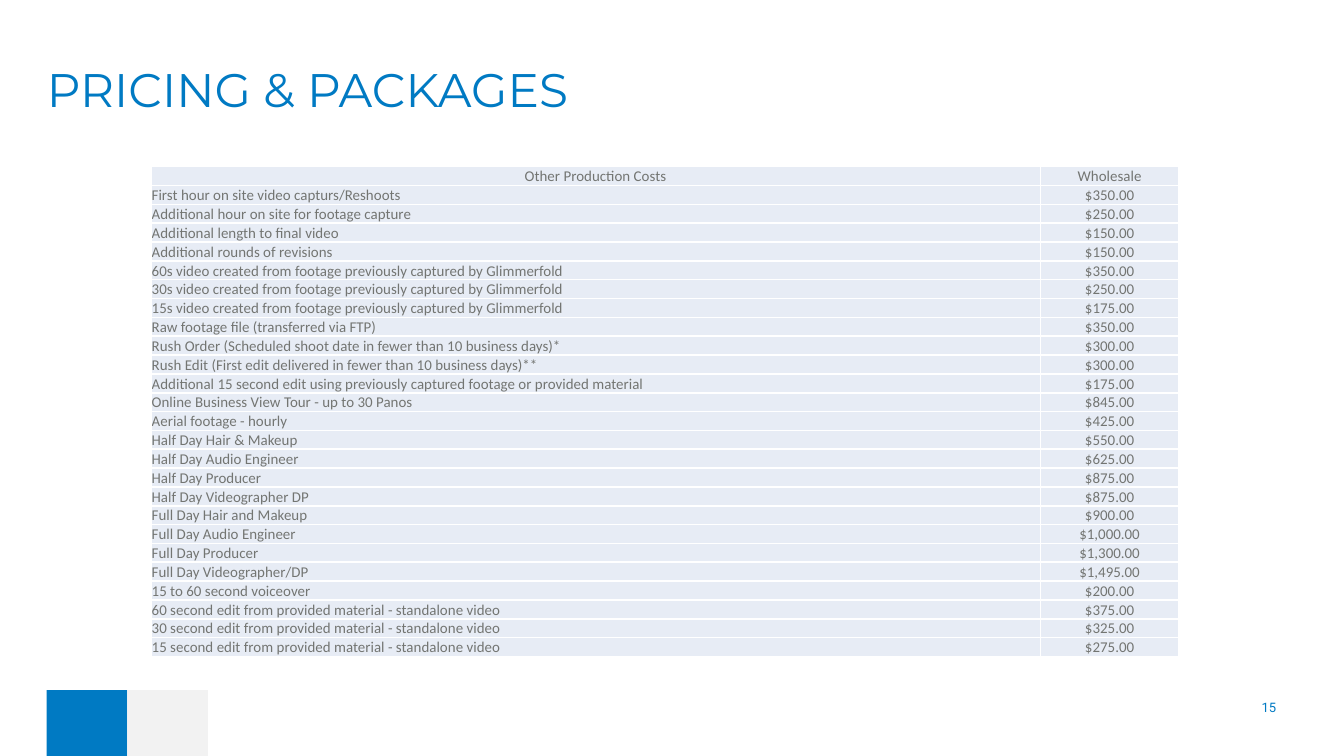
"""Build the pricing and packages slide with its table of production costs."""
from lxml.etree import SubElement
from pptx import Presentation
from pptx.dml.color import RGBColor
from pptx.enum.shapes import MSO_SHAPE as Shape
from pptx.enum.text import MSO_ANCHOR as Anchor, PP_ALIGN as Align
from pptx.oxml.ns import qn
from pptx.util import Pt

BLUE = RGBColor(0x00, 0x7A, 0xC3)
PALE_GREY = RGBColor(0xF2, 0xF2, 0xF2)
TEXT_GREY = RGBColor(0x73, 0x75, 0x72)
CELL_BLUE = RGBColor(0xE7, 0xEC, 0xF5)
WHITE = RGBColor(0xFF, 0xFF, 0xFF)

COLUMN_WIDTHS = (476.6, 74.2)
ROW_HEIGHT = 10.08
COSTS = [
    ("Other Production Costs", "Wholesale"),
    ("First hour on site video capturs/Reshoots", "$350.00"),
    ("Additional hour on site for footage capture", "$250.00"),
    ("Additional length to final video", "$150.00"),
    ("Additional rounds of revisions", "$150.00"),
    ("60s video created from footage previously captured by Glimmerfold", "$350.00"),
    ("30s video created from footage previously captured by Glimmerfold", "$250.00"),
    ("15s video created from footage previously captured by Glimmerfold", "$175.00"),
    ("Raw footage file (transferred via FTP)", "$350.00"),
    ("Rush Order (Scheduled shoot date in fewer than 10 business days)*", "$300.00"),
    ("Rush Edit (First edit delivered in fewer than 10 business days)**", "$300.00"),
    ("Additional 15 second edit using previously captured footage or provided material",
     "$175.00"),
    ("Online Business View Tour - up to 30 Panos", "$845.00"),
    ("Aerial footage - hourly", "$425.00"),
    ("Half Day Hair & Makeup", "$550.00"),
    ("Half Day Audio Engineer", "$625.00"),
    ("Half Day Producer", "$875.00"),
    ("Half Day Videographer DP", "$875.00"),
    ("Full Day Hair and Makeup", "$900.00"),
    ("Full Day Audio Engineer", "$1,000.00"),
    ("Full Day Producer", "$1,300.00"),
    ("Full Day Videographer/DP", "$1,495.00"),
    ("15 to 60 second voiceover", "$200.00"),
    ("60 second edit from provided material - standalone video", "$375.00"),
    ("30 second edit from provided material - standalone video", "$325.00"),
    ("15 second edit from provided material - standalone video", "$275.00"),
]


def add_run(para, text, font, size, color):
    span = para.add_run()
    span.text = text
    span.font.name = font
    span.font.size = Pt(size)
    span.font.color.rgb = color


def add_text(slide, place, text, font, size, align, anchor):
    box = slide.shapes.add_textbox(*map(Pt, place))
    frame = box.text_frame
    frame.word_wrap = True
    frame.vertical_anchor = anchor
    para = frame.paragraphs[0]
    para.alignment = align
    add_run(para, text, font, size, BLUE)


def add_block(slide, place, color):
    block = slide.shapes.add_shape(Shape.RECTANGLE, *map(Pt, place))
    block.shadow.inherit = False
    block.fill.solid()
    block.fill.fore_color.rgb = color
    block.line.fill.background()


def add_borders(cell):
    properties = cell._tc.get_or_add_tcPr()
    for side in ("a:lnL", "a:lnR", "a:lnT", "a:lnB"):
        line = SubElement(properties, qn(side), w=str(Pt(1)))
        fill = SubElement(line, qn("a:solidFill"))
        SubElement(fill, qn("a:srgbClr"), val=str(WHITE))


def fill_cell(cell, text, align):
    add_borders(cell)
    cell.fill.solid()
    cell.fill.fore_color.rgb = CELL_BLUE
    cell.margin_left = cell.margin_right = cell.margin_top = Pt(0.5)
    cell.margin_bottom = 0
    cell.vertical_anchor = Anchor.BOTTOM
    para = cell.text_frame.paragraphs[0]
    para.alignment = align
    add_run(para, text, "Calibri", 8, TEXT_GREY)


def add_cost_table(slide, left, top):
    size = (sum(COLUMN_WIDTHS), ROW_HEIGHT * len(COSTS))
    table = slide.shapes.add_table(
        len(COSTS), len(COLUMN_WIDTHS), Pt(left), Pt(top), *map(Pt, size)).table
    table.horz_banding = False
    table.first_row = False
    for column, width in zip(table.columns, COLUMN_WIDTHS):
        column.width = Pt(width)
    for row_index, texts in enumerate(COSTS):
        table.rows[row_index].height = Pt(ROW_HEIGHT)
        for column_index, text in enumerate(texts):
            is_item = row_index > 0 and column_index == 0
            fill_cell(table.cell(row_index, column_index), text,
                      Align.LEFT if is_item else Align.CENTER)


def main():
    deck = Presentation()
    deck.slide_width, deck.slide_height = Pt(720), Pt(405)
    slide = deck.slides.add_slide(deck.slide_layouts[6])
    add_block(slide, (25, 369.7, 43.2, 35.3), BLUE)
    add_block(slide, (68.2, 369.7, 43.2, 35.3), PALE_GREY)
    add_text(slide, (666, 367.9, 27.4, 21.6), "15", "Roboto", 7,
             Align.CENTER, Anchor.MIDDLE)
    add_text(slide, (18, 28.8, 675.4, 25.9), "PRICING & PACKAGES", "Montserrat", 25.2,
             Align.LEFT, Anchor.TOP)
    add_cost_table(slide, 80.8, 89.3)
    deck.save("out.pptx")


if __name__ == "__main__":
    main()
